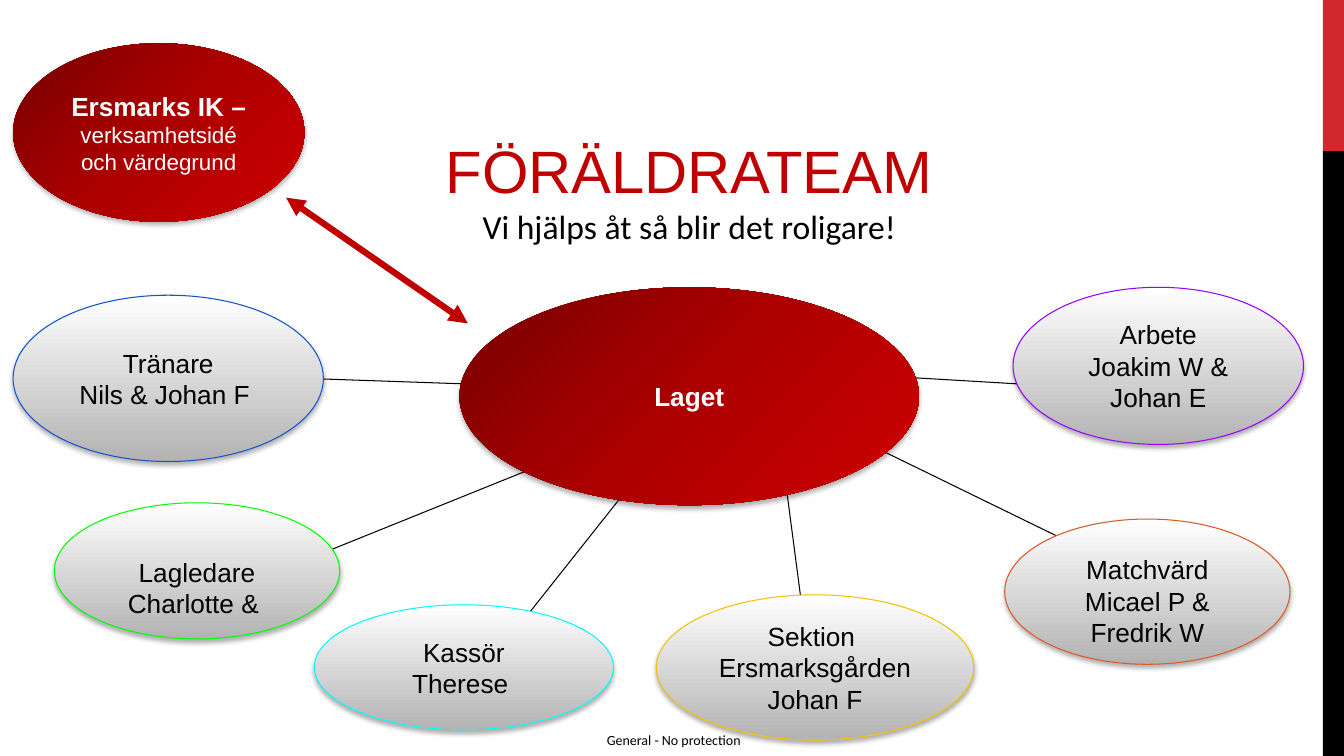
import pptx
import pptx.util
import pptx.dml.color
import pptx.enum.dml
import pptx.enum.shapes
import pptx.enum.text
import pptx.oxml
import pptx.oxml.ns

Cm, Pt = pptx.util.Cm, pptx.util.Pt
SHAPE = pptx.enum.shapes.MSO_SHAPE
ANCHOR = pptx.enum.text.MSO_ANCHOR
CENTER = pptx.enum.text.PP_ALIGN.CENTER

COLORS = {
    "red": "C00000", "accent": "D1282E", "black": "000000", "white": "FFFFFF",
    "blue": "1155CC", "green": "00FF00", "purple": "9900FF",
    "orange": "DC5924", "cyan": "00FFFF", "yellow": "F5C201",
}
GRADIENTS = {  # stops in percent, clockwise angle
    "grey": ([(0, "FFFFFF"), (100, "B3B3B3")], 90),
    "red": ([(0, "770000"), (50, "AC0000"), (100, "CE0000")], 45),
}

# All lengths in cm
BARS = [((33.34, 0, 0.53, 3.81), "accent"), ((33.34, 3.81, 0.53, 15.24), "black")]

TITLE_BOX = (9.6, 3.25, 15.54, 3.1)
TITLE = [
    [("FÖRÄLDRATEAM", dict(size=42.7, name="Arial", color="red"))],
    [("Vi hjälps åt så blir det roligare!",
      dict(size=24, name="Calibri", color="black"))],
]
FOOTER_BOX = (15.24, 18.44, 3.48, 0.43)
FOOTER = [[("General - No protection",
            dict(size=10, name="Calibri", color="black"))]]

SPOKES = [
    ((20.22, 15.37), (19.76, 11.86)),
    ((22.2, 9.47), (26.95, 9.75)),
    ((12.57, 16.41), (15.75, 12.4)),
    ((26.64, 13.51), (22.07, 11.28)),
    ((8.15, 9.55), (12.45, 9.7)),
    ((7.8, 14.07), (13.28, 11.86)),
]
ARROW = ((7.21, 4.98), (11.79, 8.15))

# Box, outline, text drop below the middle, lines
ROLES = [
    ((0.33, 7.44, 7.82, 4.19), "blue", 0, ["Tränare", "Nils & Johan F "]),
    ((1.37, 12.67, 7.19, 3.43), "green", 0.42, ["Lagledare", "Charlotte & "]),
    ((25.53, 7.24, 7.32, 3.96), "purple", 0, ["Arbete", "Joakim W & Johan E"]),
    ((25.32, 13.08, 7.19, 3.66), "orange", 0.23,
     ["Matchvärd", "Micael P & Fredrik W"]),
    ((7.92, 15.24, 7.54, 3.15), "cyan", 0, ["Kassör", "Therese "]),
    ((16.54, 14.99, 8, 3.66), "yellow", 0,
     ["Sektion ", "Ersmarksgården ", "Johan F"]),
]
ROLE_FONT = dict(size=18.7, name="Arial", color="black")
HEAD_FONT = dict(size=18.7, name="Arial", color="white", bold=True)
HUBS = [
    ((0.33, 1.09, 7.34, 4.5),
     [[("Ersmarks IK – ", HEAD_FONT),
       ("verksamhetsidé och värdegrund",
        dict(HEAD_FONT, size=16, bold=False))]]),
    ((11.58, 7.24, 11.58, 5.49), [[("Laget", HEAD_FONT)]]),
]


def rgb(name):
    return pptx.dml.color.RGBColor.from_string(COLORS[name])


def add_xml(parent, xml):
    """Append an element written in the a: namespace."""
    head, tail = xml.split(" ", 1)
    parent.append(pptx.oxml.parse_xml(
        f"{head} {pptx.oxml.ns.nsdecls('a')} {tail}"))


def write(frame, paragraphs, insets, anchor, wrap=True):
    """Fill a frame; each paragraph is a list of (text, font values)."""
    frame.auto_size = pptx.enum.text.MSO_AUTO_SIZE.NONE
    frame.word_wrap = wrap
    frame.vertical_anchor = anchor
    for side, inset in zip(("left", "top", "right", "bottom"), insets):
        setattr(frame, f"margin_{side}", Cm(inset))
    for index, spans in enumerate(paragraphs):
        para = frame.add_paragraph() if index else frame.paragraphs[0]
        para.alignment = CENTER
        for text, values in spans:
            span = para.add_run()
            span.text = text
            for key, value in values.items():
                if key == "color":
                    span.font.color.rgb = rgb(value)
                else:
                    setattr(span.font, key, Pt(value) if key == "size" else value)


def add_line(page, ends, color, width):
    (x1, y1), (x2, y2) = ends
    line = page.shapes.add_connector(
        pptx.enum.shapes.MSO_CONNECTOR.STRAIGHT, Cm(x1), Cm(y1), Cm(x2), Cm(y2))
    line.line.color.rgb = rgb(color)
    line.line.width = Pt(width)
    add_xml(line._element.spPr, "<a:effectLst />")
    return line


def add_ellipse(page, box, gradient, outline=None):
    """Add an ellipse with a gradient fill and a soft shadow below it."""
    ellipse = page.shapes.add_shape(SHAPE.OVAL, *map(Cm, box))
    stops, angle = GRADIENTS[gradient]
    ellipse.fill.gradient()
    ellipse.fill.gradient_angle = 360 - angle
    properties = ellipse._element.spPr
    stop_list = properties.find(".//" + pptx.oxml.ns.qn("a:gsLst"))
    for stop in list(stop_list):
        stop_list.remove(stop)
    for position, color in stops:
        add_xml(stop_list, f'<a:gs pos="{position * 1000}">'
                           f'<a:srgbClr val="{color}"/></a:gs>')
    if outline:
        ellipse.line.color.rgb = rgb(outline)
        ellipse.line.width = Pt(0.75)
    else:
        ellipse.line.fill.background()
    ellipse.shadow.inherit = False
    add_xml(properties.find(pptx.oxml.ns.qn("a:effectLst")),
            f'<a:outerShdw blurRad="{Pt(3.5)}" dist="{Pt(2.2)}" dir="5400000" '
            'rotWithShape="0"><a:srgbClr val="000000"><a:alpha val="31000"/>'
            '</a:srgbClr></a:outerShdw>')
    return ellipse


def main():
    deck = pptx.Presentation()
    deck.slide_width, deck.slide_height = Cm(33.87), Cm(19.05)
    page = deck.slides.add_slide(deck.slide_layouts[5])

    for box, color in BARS:
        bar = page.shapes.add_shape(SHAPE.RECTANGLE, *map(Cm, box))
        bar.shadow.inherit = False
        bar.fill.solid()
        bar.fill.fore_color.rgb = rgb(color)
        bar.line.fill.background()

    title = page.shapes.title
    title.left, title.top, title.width, title.height = map(Cm, TITLE_BOX)
    write(title.text_frame, TITLE, (0.25, 0.13, 0.25, 0.13), ANCHOR.TOP)

    for ends in SPOKES:
        add_line(page, ends, "black", 0.75)
    arrow = add_line(page, ARROW, "red", 4.5)
    for end in ("head", "tail"):
        add_xml(arrow.line._get_or_add_ln(), f'<a:{end}End type="triangle"/>')

    for box, outline, drop, lines in ROLES:
        ellipse = add_ellipse(page, box, "grey", outline)
        write(ellipse.text_frame, [[(line, ROLE_FONT)] for line in lines],
              (0.33, 2 * drop, 0.33, 0), ANCHOR.MIDDLE)
    for box, paragraphs in HUBS:
        ellipse = add_ellipse(page, box, "red")
        write(ellipse.text_frame, paragraphs, [0.33] * 4, ANCHOR.MIDDLE)

    footer = page.shapes.add_textbox(*map(Cm, FOOTER_BOX))
    write(footer.text_frame, FOOTER, [0] * 4, ANCHOR.TOP, wrap=False)
    deck.save("out.pptx")


if __name__ == "__main__":
    main()
